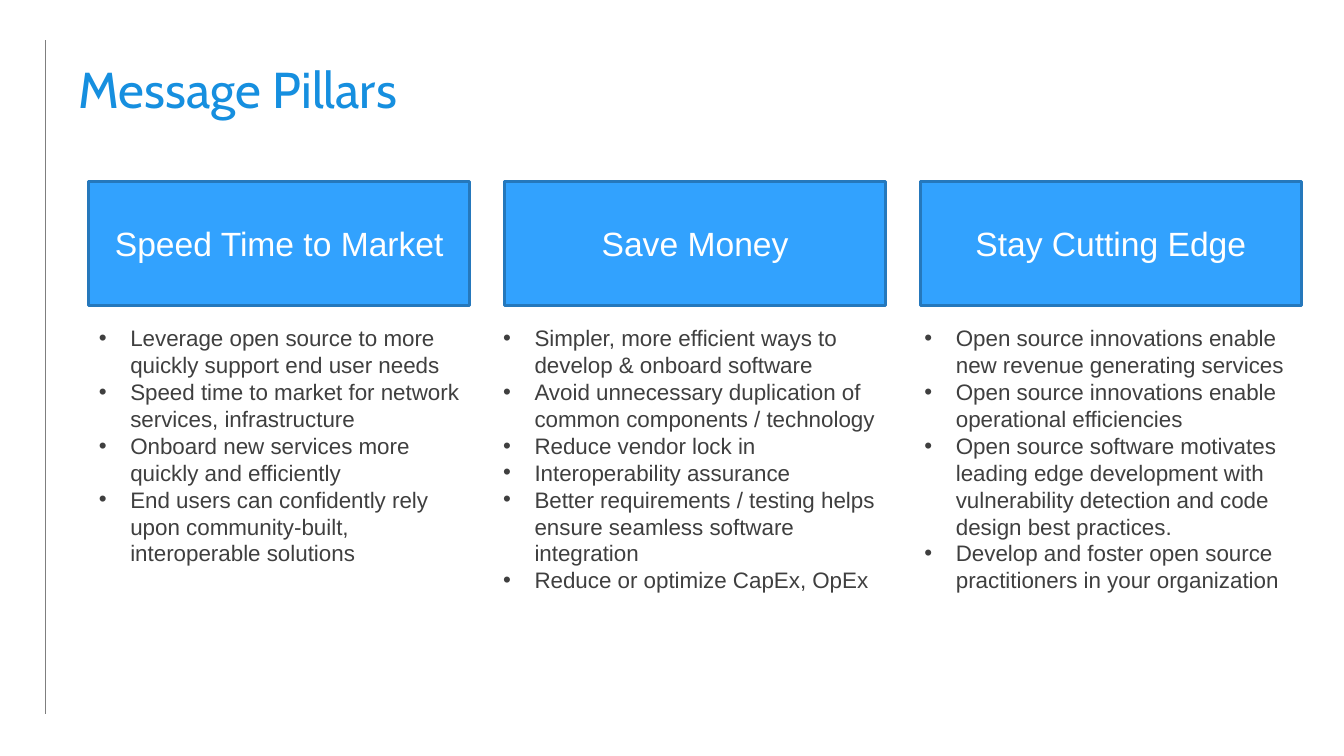
from lxml import etree
from pptx import Presentation
from pptx.dml.color import RGBColor
from pptx.enum.shapes import MSO_CONNECTOR, MSO_SHAPE
from pptx.enum.text import MSO_ANCHOR, MSO_AUTO_SIZE, PP_ALIGN
from pptx.oxml.ns import qn
from pptx.util import Pt

STRAIGHT = MSO_CONNECTOR.STRAIGHT
RECTANGLE = MSO_SHAPE.RECTANGLE
TOP, MIDDLE = MSO_ANCHOR.TOP, MSO_ANCHOR.MIDDLE
LEFT, CENTER = PP_ALIGN.LEFT, PP_ALIGN.CENTER
FIXED, GROW = MSO_AUTO_SIZE.NONE, MSO_AUTO_SIZE.SHAPE_TO_FIT_TEXT
COMPARISON_LAYOUT = 4

PILLAR_LEFT, PILLAR_PITCH = 63.36, 297
# Heading, list left, list width, list height, list items
PILLARS = [
    ("Speed Time to Market", 63.36, 272.16, 181.44, [
        "Leverage open source to more quickly support end user needs",
        "Speed time to market for network services, infrastructure",
        "Onboard new services more quickly and efficiently",
        "End users can confidently rely upon community-built, interoperable solutions",
    ]),
    ("Save Money", 352.08, 280.8, 200.88, [
        "Simpler, more efficient ways to develop & onboard software",
        "Avoid unnecessary duplication of common components / technology",
        "Reduce vendor lock in",
        "Interoperability assurance",
        "Better requirements / testing helps ensure seamless software integration",
        "Reduce or optimize CapEx, OpEx",
    ]),
    ("Stay Cutting Edge", 653.04, 280.8, 200.88, [
        "Open source innovations enable new revenue generating services",
        "Open source innovations enable operational efficiencies",
        "Open source software motivates leading edge development with "
        "vulnerability detection and code design best practices.",
        "Develop and foster open source practitioners in your organization",
    ]),
]


def color(hex_code):
    return RGBColor.from_string(hex_code)


class PillarPage:
    TITLE_FONT, BODY_FONT = "Cabin", "Arial"
    TITLE_BLUE, FILL_BLUE, EDGE_BLUE = "168FDF", "32A2FE", "2578BC"
    TEXT_GRAY, RULE_GRAY, WHITE = "3F3F3F", "7F7F7F", "FFFFFF"
    INDENT = 22.5

    def __init__(self, deck):
        self.page = deck.slides.add_slide(deck.slide_layouts[COMPARISON_LAYOUT])
        self.bodies = [holder for holder in self.page.placeholders
                       if holder.placeholder_format.idx in range(1, 5)]

    def place(self, box, left, top, width, height):
        box.left, box.top = Pt(left), Pt(top)
        box.width, box.height = Pt(width), Pt(height)

    def format_text(self, frame, font_name, size, hex_code, align, anchor, spacing=1.0):
        frame.word_wrap = True
        frame.vertical_anchor = anchor
        for para in frame.paragraphs:
            para.alignment = align
            para.line_spacing = spacing
            para.space_before = para.space_after = Pt(0)
            for span in para.runs:
                span.font.name = font_name
                span.font.size = Pt(size)
                span.font.bold = False
                span.font.color.rgb = color(hex_code)

    def title(self, text, *bounds):
        box = self.page.shapes.title
        self.place(box, *bounds)
        box.text_frame.text = text
        box.text_frame.auto_size = FIXED
        self.format_text(box.text_frame, self.TITLE_FONT, 36, self.TITLE_BLUE,
                         LEFT, MIDDLE, 0.9)

    def rule(self, left, top, bottom):
        line = self.page.shapes.add_connector(
            STRAIGHT, Pt(left), Pt(top), Pt(left), Pt(bottom))
        line.line.color.rgb = color(self.RULE_GRAY)
        line.line.width = Pt(0.75)
        etree.SubElement(line._element.spPr, qn("a:effectLst"))

    def heading(self, text, *bounds):
        box = self.page.shapes.add_shape(RECTANGLE, *map(Pt, bounds))
        box.shadow.inherit = False
        box.fill.solid()
        box.fill.fore_color.rgb = color(self.FILL_BLUE)
        box.line.color.rgb = color(self.EDGE_BLUE)
        box.line.width = Pt(2)
        box.text_frame.text = text
        self.format_text(box.text_frame, self.BODY_FONT, 24, self.WHITE, CENTER, MIDDLE)

    def bullet_list(self, items, *bounds):
        box = self.bodies.pop(0)
        self.place(box, *bounds)
        frame = box.text_frame
        frame.text = "\n".join(items)
        frame.auto_size = GROW
        for para in frame.paragraphs:
            properties = para._p.get_or_add_pPr()
            properties.set("marL", str(Pt(self.INDENT)))
            properties.set("indent", str(-Pt(self.INDENT)))
            etree.SubElement(properties, qn("a:buFont"), typeface=self.BODY_FONT)
            etree.SubElement(properties, qn("a:buChar"), char="•")
        self.format_text(frame, self.BODY_FONT, 16, self.TEXT_GRAY, LEFT, TOP)

    def remove_unused_bodies(self):
        for box in self.bodies:
            box._element.getparent().remove(box._element)


def main():
    deck = Presentation()
    deck.slide_width, deck.slide_height = Pt(960), Pt(540)
    page = PillarPage(deck)
    page.rule(32.4, 28.8, 509.76)
    page.title("Message Pillars", 48.96, 28.8, 861.12, 73.44)
    for column, (heading, left, width, height, items) in enumerate(PILLARS):
        page.heading(heading, PILLAR_LEFT + column * PILLAR_PITCH, 129.6, 272.16, 88.56)
        page.bullet_list(items, left, 228.24, width, height)
    page.remove_unused_bodies()
    deck.save("out.pptx")


if __name__ == "__main__":
    main()
